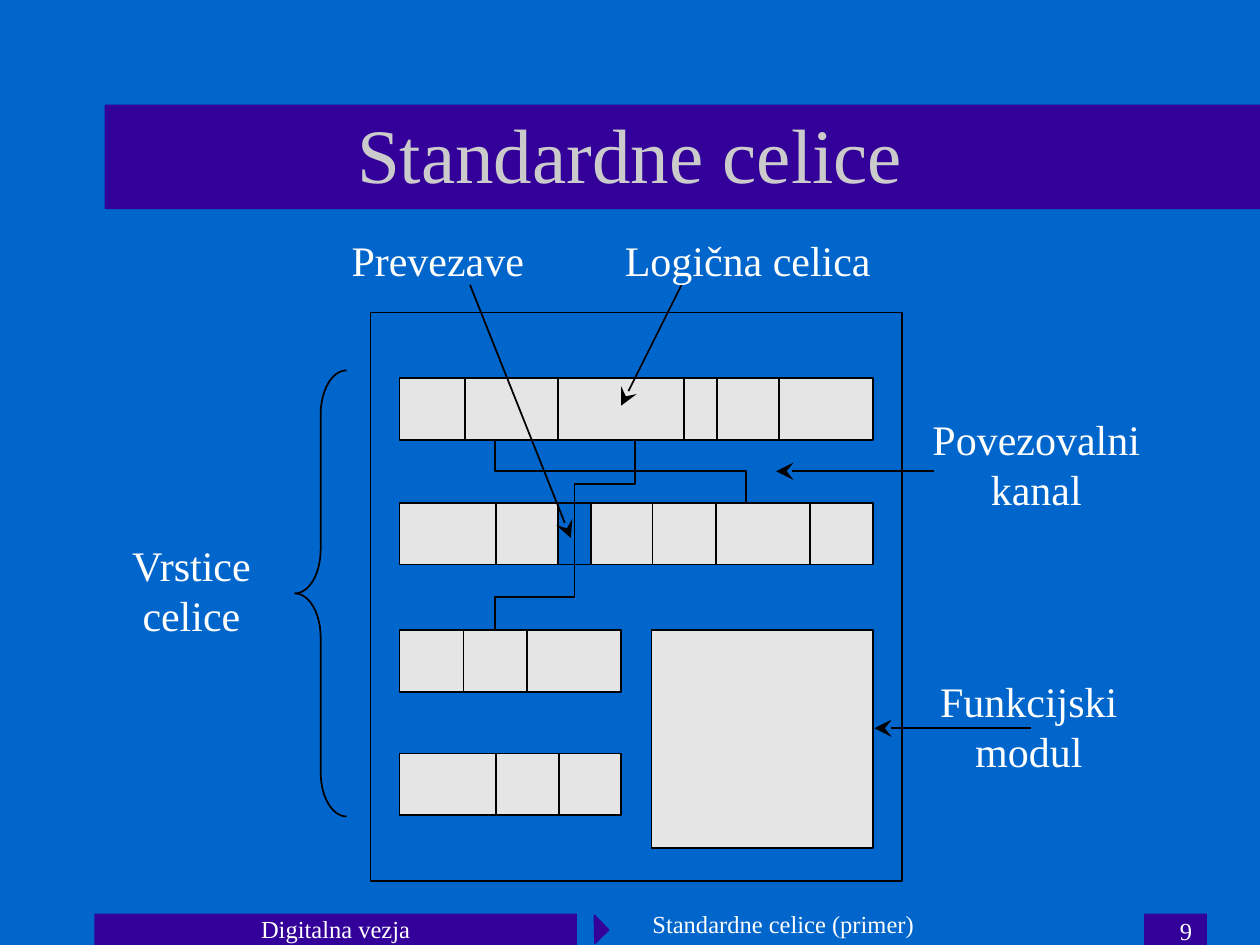
"""Build the slide about standard cells."""
from itertools import pairwise

from lxml.etree import SubElement
from pptx import Presentation
from pptx.dml.color import RGBColor
from pptx.enum.shapes import MSO_CONNECTOR, MSO_SHAPE
from pptx.enum.text import MSO_ANCHOR, PP_ALIGN
from pptx.oxml.ns import qn
from pptx.util import Inches, Pt

BLUE, PURPLE, WHITE = "0066CC", "330099", "FFFFFF"
SILVER, GREY, BLACK = "CBCBCB", "E5E5E5", "000000"
CELL_HEIGHT = 0.49
ROWS = [
    (3.0, [3.17, 3.69, 4.43, 5.43, 5.69, 6.18, 6.93]),
    (3.99, [3.17, 3.94, 4.43, 4.69, 5.18, 5.68, 6.43, 6.93]),
    (5.0, [3.17, 3.68, 4.18, 4.93]),
    (5.98, [3.17, 3.94, 4.44, 4.93]),
]
FEEDTHROUGH = (3.99, 4.43)
WIRES = [
    [(3.93, 5), (3.93, 4.74), (4.56, 4.74), (4.56, 3.84), (5.04, 3.84), (5.04, 3.49)],
    [(3.93, 3.49), (3.93, 3.74), (5.92, 3.74), (5.92, 3.99)],
]
ARROWS = [
    ((3.73, 2.26), (4.53, 4.27)),
    ((5.41, 2.26), (4.93, 3.22)),
    ((7.41, 3.74), (6.16, 3.74)),
    ((8.18, 5.78), (6.94, 5.78)),
]
LABELS = [
    ((2.69, 1.81, 1.57, 0.5), ["Prevezave"]),
    ((4.86, 1.81, 2.15, 0.5), ["Logična celica"]),
    ((0.94, 4.23, 1.16, 0.9), ["Vrstice", "celice"]),
    ((7.26, 3.23, 1.93, 0.9), ["Povezovalni", "kanal"]),
    ((7.36, 5.31, 1.61, 0.9), ["Funkcijski", "modul"]),
]


def color(value):
    """Turn a hex string into a colour."""
    return RGBColor.from_string(value)


def style(shape, fill=None, line=None):
    """Set fill and line, and drop the shadow."""
    shape.shadow.inherit = False
    if fill:
        shape.fill.solid()
        shape.fill.fore_color.rgb = color(fill)
    else:
        shape.fill.background()
    if line:
        shape.line.color.rgb = color(line)
        shape.line.width = Pt(1)
    else:
        shape.line.fill.background()


def add_block(page, area, fill=None, line=None, kind=MSO_SHAPE.RECTANGLE):
    """Add a preset shape at left, top, width, height."""
    shape = page.shapes.add_shape(kind, *map(Inches, area))
    style(shape, fill, line)
    return shape


def add_text(page, area, lines, size, align=PP_ALIGN.CENTER, ink=WHITE,
             anchor=MSO_ANCHOR.MIDDLE, wrap=True):
    """Add a text box with one paragraph for each line."""
    box = page.shapes.add_textbox(*map(Inches, area))
    frame = box.text_frame
    frame.word_wrap = wrap
    frame.vertical_anchor = anchor
    for index, line in enumerate(lines):
        paragraph = frame.add_paragraph() if index else frame.paragraphs[0]
        paragraph.alignment = align
        span = paragraph.add_run()
        span.text = line
        span.font.name = "Times New Roman"
        span.font.size = Pt(size)
        span.font.color.rgb = color(ink)


def add_wire(page, points):
    """Add an open path of straight segments."""
    start, *rest = [(Inches(x), Inches(y)) for x, y in points]
    builder = page.shapes.build_freeform(*start)
    builder.add_line_segments(rest, close=False)
    style(builder.convert_to_shape(), line=BLACK)


def add_arrow(page, start, end):
    """Add a straight connector with an arrowhead at its end."""
    arrow = page.shapes.add_connector(
        MSO_CONNECTOR.STRAIGHT, *map(Inches, (*start, *end)))
    arrow.line.color.rgb = color(BLACK)
    arrow.line.width = Pt(1)
    SubElement(arrow.line._get_or_add_ln(), qn("a:tailEnd"),
               type="stealth", w="lg", len="lg")
    SubElement(arrow._element.spPr, qn("a:effectLst"))


def add_frame(page):
    """Add the title band, the footer and their text."""
    for area in [(9.08, 7.25, 0.5, 0.25), (0.75, 7.25, 3.83, 0.25),
                 (0.83, 0.83, 9.17, 0.83)]:
        add_block(page, area, PURPLE)
    marker = add_block(page, (4.64, 7.3, 0.16, 0.15), PURPLE, PURPLE,
                       MSO_SHAPE.RIGHT_TRIANGLE)
    marker.rotation = 225.8
    add_text(page, (0.75, 0.67, 8.5, 1.08), ["Standardne celice"], 44, ink=SILVER)
    add_text(page, (0.75, 7.21, 3.83, 0.33), ["Digitalna vezja"], 14)
    add_text(page, (5.08, 7.17, 3.83, 0.33), ["Standardne celice (primer)"], 14,
             PP_ALIGN.LEFT)
    add_text(page, (7.48, 7.22, 2.08, 0.25), ["9"], 14, PP_ALIGN.RIGHT,
             anchor=MSO_ANCHOR.TOP)


def add_chip(page):
    """Add the chip outline, the module, the cell rows and the wires."""
    add_block(page, (2.94, 2.48, 4.22, 4.51), line=BLACK)
    add_block(page, (5.17, 5, 1.76, 1.73), GREY, BLACK)
    for top, edges in ROWS:
        for left, right in pairwise(edges):
            fill = None if (top, left) == FEEDTHROUGH else GREY
            add_block(page, (left, top, right - left, CELL_HEIGHT), fill, BLACK)
    for points in WIRES:
        add_wire(page, points)


def main():
    """Build and save the deck."""
    deck = Presentation()
    deck.slide_width, deck.slide_height = Inches(10), Inches(7.5)
    page = deck.slides.add_slide(deck.slide_layouts[6])
    page.background.fill.solid()
    page.background.fill.fore_color.rgb = color(BLUE)
    add_frame(page)
    add_chip(page)
    brace = add_block(page, (2.34, 2.94, 0.41, 3.54), line=BLACK,
                      kind=MSO_SHAPE.LEFT_BRACE)
    brace.adjustments[0] = 0.85
    for start, end in ARROWS:
        add_arrow(page, start, end)
    for area, lines in LABELS:
        add_text(page, area, lines, 24, wrap=False)
    deck.save("out.pptx")


if __name__ == "__main__":
    main()
